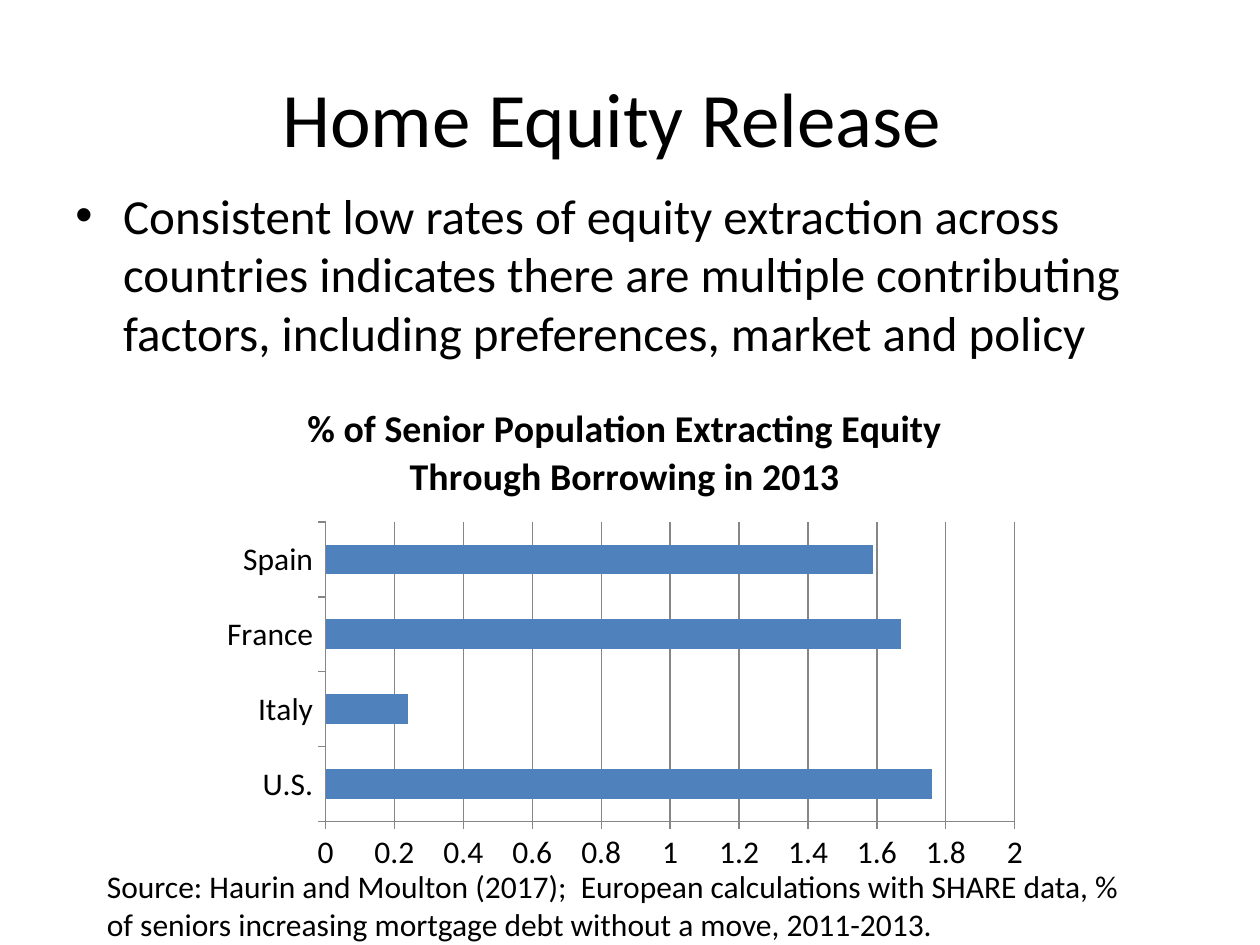
import pptx
import pptx.chart.data
import pptx.dml.color
import pptx.enum.chart
import pptx.enum.text
import pptx.oxml
import pptx.util
from pptx.util import Inches

BLACK = pptx.dml.color.RGBColor(0x00, 0x00, 0x00)
BLUE = pptx.dml.color.RGBColor(0x4F, 0x81, 0xBD)
GRAY = pptx.dml.color.RGBColor(0x86, 0x86, 0x86)
FONT = "Calibri"
RATES = {"U.S.": 1.76, "Italy": 0.24, "France": 1.67, "Spain": 1.59}


def format_font(font, size, bold=False):
    """Apply the slide's typeface and colour at the given size."""
    font.name = FONT
    font.size = pptx.util.Pt(size)
    font.bold = bold
    font.color.rgb = BLACK


def add_text(slide, box, text, size=18, align=pptx.enum.text.PP_ALIGN.LEFT,
             anchor=pptx.enum.text.MSO_ANCHOR.TOP):
    """Add a wrapped text box and return its shape."""
    shape = slide.shapes.add_textbox(*box)
    frame = shape.text_frame
    frame.word_wrap = True
    frame.vertical_anchor = anchor
    paragraph = frame.paragraphs[0]
    paragraph.alignment = align
    run = paragraph.add_run()
    run.text = text
    format_font(run.font, size)
    return shape


def add_title(slide, box):
    """Add the heading, centred slightly left of the box middle."""
    shape = add_text(slide, box, "Home Equity Release", size=44,
                     align=pptx.enum.text.PP_ALIGN.CENTER,
                     anchor=pptx.enum.text.MSO_ANCHOR.MIDDLE)
    shape.text_frame.margin_right = Inches(0.38)


def add_body(slide, box):
    """Add the bulleted statement with a hanging indent."""
    shape = add_text(
        slide, box,
        "Consistent low rates of equity extraction across countries indicates "
        "there are multiple contributing factors, including preferences, "
        "market and policy", size=28)
    properties = shape.text_frame.paragraphs[0]._p.get_or_add_pPr()
    indent = Inches(0.38)
    properties.set("marL", str(indent))
    properties.set("indent", str(-indent))
    namespace = pptx.oxml.ns.nsdecls("a")
    for markup in (f'<a:buFont {namespace} typeface="Arial"/>',
                   f'<a:buChar {namespace} char="•"/>'):
        properties.append(pptx.oxml.parse_xml(markup))


def add_equity_chart(slide, box):
    """Add the bar chart of equity extraction by country."""
    data = pptx.chart.data.CategoryChartData()
    data.categories = list(RATES)
    data.add_series("Series 1", list(RATES.values()))
    chart = slide.shapes.add_chart(
        pptx.enum.chart.XL_CHART_TYPE.BAR_CLUSTERED, *box, data).chart
    format_font(chart.font, 18)
    chart.has_legend = False
    chart.has_title = True
    title = chart.chart_title
    title.include_in_layout = False
    run = title.text_frame.paragraphs[0].add_run()
    run.text = "% of Senior Population Extracting Equity Through Borrowing in 2013"
    format_font(run.font, 21.6, bold=True)

    plot = chart.plots[0]
    plot.gap_width = 150
    plot.vary_by_categories = False
    fill = plot.series[0].format.fill
    fill.solid()
    fill.fore_color.rgb = BLUE

    value_axis = chart.value_axis
    value_axis.minimum_scale = 0
    value_axis.maximum_scale = 2
    value_axis.major_unit = 0.2
    value_axis.has_major_gridlines = True
    value_axis.tick_labels.number_format = "General"
    value_axis.tick_labels.number_format_is_linked = False
    for axis in (chart.category_axis, value_axis):
        axis.major_tick_mark = pptx.enum.chart.XL_TICK_MARK.OUTSIDE
        format_font(axis.tick_labels.font, 18)
    for owner in (chart.category_axis, value_axis, value_axis.major_gridlines):
        owner.format.line.color.rgb = GRAY
        owner.format.line.width = pptx.util.Pt(0.75)


def add_source_note(slide, box):
    """Add the data source below the chart."""
    add_text(slide, box,
             "Source: Haurin and Moulton (2017);  European calculations with "
             "SHARE data, % of seniors increasing mortgage debt without a "
             "move, 2011-2013.")


def main():
    """Build and save the slide."""
    presentation = pptx.Presentation()
    presentation.slide_width = Inches(10)
    presentation.slide_height = Inches(7.5)
    slide = presentation.slides.add_slide(presentation.slide_layouts[6])
    regions = (
        (add_title, (0.5, 0.3, 9, 1.25)),
        (add_body, (0.5, 1.42, 9, 1.33)),
        (add_equity_chart, (1.67, 3, 6.58, 4)),
        (add_source_note, (0.75, 6.83, 8.42, 0.71)),
    )
    for add_region, lengths in regions:
        add_region(slide, [Inches(length) for length in lengths])
    presentation.save("out.pptx")


if __name__ == "__main__":
    main()
